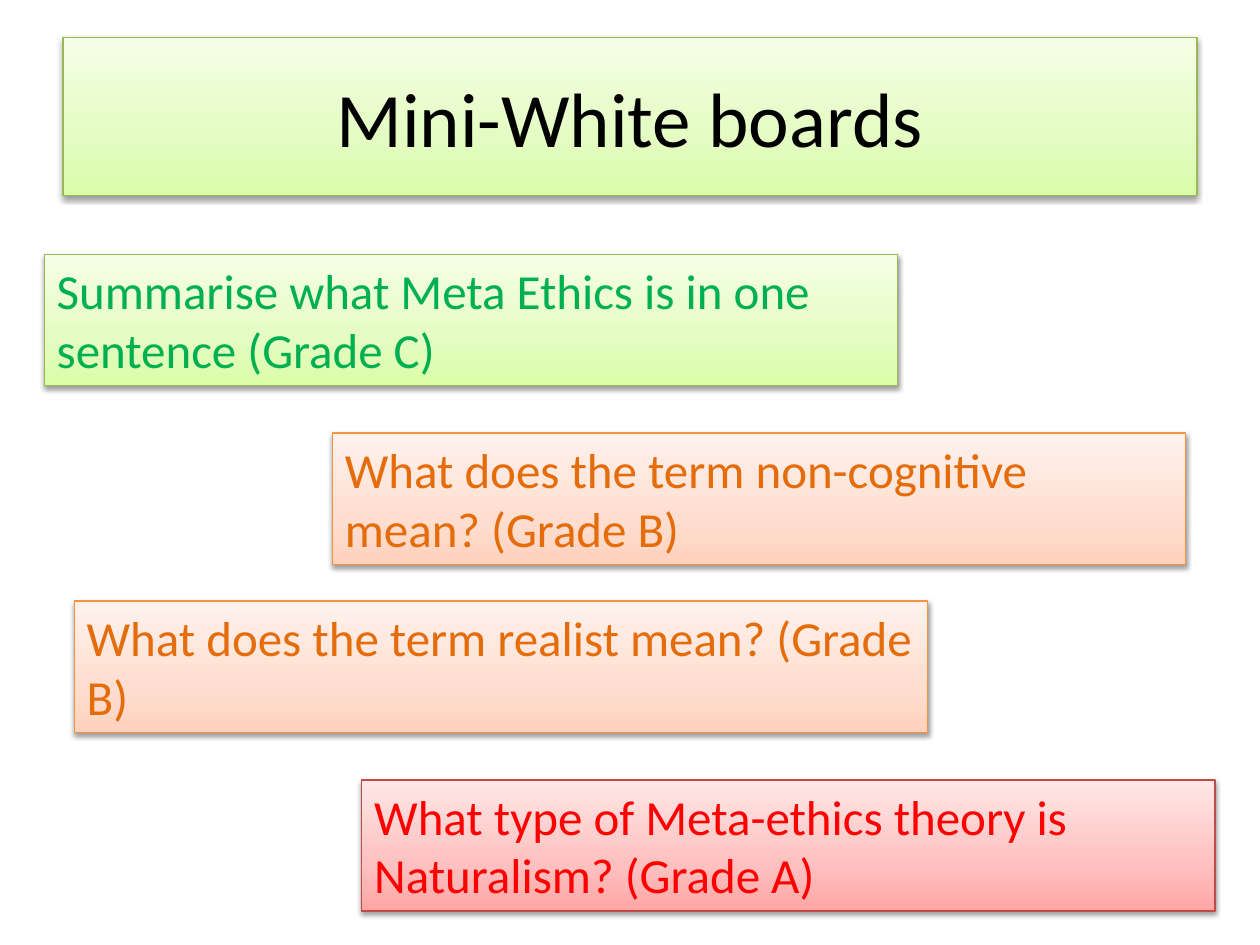
from dataclasses import dataclass

from pptx import Presentation
from pptx.dml.color import RGBColor
from pptx.enum.shapes import MSO_SHAPE
from pptx.enum.text import MSO_ANCHOR, PP_ALIGN
from pptx.oxml import parse_xml
from pptx.oxml.ns import nsdecls, qn
from pptx.util import Pt


@dataclass(frozen=True)
class Tone:
    stops: tuple
    line: str
    text: str


@dataclass(frozen=True)
class Theme:
    font: str = "Calibri"
    title_size: int = 44
    body_size: int = 28
    title_color: str = "000000"
    shadow: str = "000000"
    green: Tone = Tone(("DAFDA7", "E4FCC2", "F5FFE7"), "98B955", "00B050")
    orange: Tone = Tone(("FFD2BD", "FFDED0", "FFF2ED"), "F69240", "E46C0A")
    red: Tone = Tone(("FFA6A5", "FFC0BF", "FFE7E7"), "BF4C48", "FF0000")


def write_text(tf, text, *, font, size, color, align=PP_ALIGN.LEFT, anchor=MSO_ANCHOR.TOP):
    tf.word_wrap = True
    tf.vertical_anchor = anchor
    p = tf.paragraphs[0]
    p.alignment = align
    r = p.add_run()
    r.text = text
    r.font.name = font
    r.font.size = Pt(size)
    r.font.color.rgb = RGBColor.from_string(color)


class Board:
    def __init__(self, slide, theme):
        self.slide = slide
        self.theme = theme

    def panel(self, left, top, width, height, tone):
        sp = self.slide.shapes.add_shape(
            MSO_SHAPE.RECTANGLE, Pt(left), Pt(top), Pt(width), Pt(height))
        sp.line.color.rgb = RGBColor.from_string(tone.line)
        sp.line.width = Pt(0.75)
        self.gradient(sp, tone.stops)
        self.shadow(sp)
        return sp

    def gradient(self, sp, stops):
        marks = "".join(
            f'<a:gs pos="{pos * 1000}"><a:srgbClr val="{color}"/></a:gs>'
            for pos, color in zip((0, 35, 100), stops))
        fill = parse_xml(
            f'<a:gradFill {nsdecls("a")} rotWithShape="1"><a:gsLst>{marks}</a:gsLst>'
            '<a:lin ang="16200000" scaled="1"/></a:gradFill>')
        sp.element.spPr.find(qn("a:prstGeom")).addnext(fill)

    def shadow(self, sp):
        sp.shadow.inherit = False
        sp.element.spPr.find(qn("a:effectLst")).append(parse_xml(
            f'<a:outerShdw {nsdecls("a")} blurRad="{Pt(3.1)}" dist="{Pt(1.6)}" '
            f'dir="5400000" rotWithShape="0"><a:srgbClr val="{self.theme.shadow}">'
            '<a:alpha val="38000"/></a:srgbClr></a:outerShdw>'))

    def title(self, text):
        sp = self.panel(36, 21.6, 648, 90, self.theme.green)
        write_text(sp.text_frame, text, font=self.theme.font, size=self.theme.title_size,
                   color=self.theme.title_color, align=PP_ALIGN.CENTER,
                   anchor=MSO_ANCHOR.MIDDLE)

    def question(self, text, left, top, tone):
        sp = self.panel(left, top, 487.5, 75, tone)
        write_text(sp.text_frame, text, font=self.theme.font, size=self.theme.body_size,
                   color=tone.text)


def main():
    prs = Presentation()
    prs.slide_width, prs.slide_height = Pt(720), Pt(540)
    theme = Theme()
    board = Board(prs.slides.add_slide(prs.slide_layouts[6]), theme)
    board.title("Mini-White boards")
    questions = (
        ("Summarise what Meta Ethics is in one sentence (Grade C)", 25.3, 145.5, theme.green),
        ("What does the term non-cognitive mean? (Grade B)", 190, 247.5, theme.orange),
        ("What does the term realist mean? (Grade B)", 42.5, 343.5, theme.orange),
        ("What type of Meta-ethics theory is Naturalism? (Grade A)", 206.8, 445.7, theme.red),
    )
    for question in questions:
        board.question(*question)
    prs.save("out.pptx")


if __name__ == "__main__":
    main()
